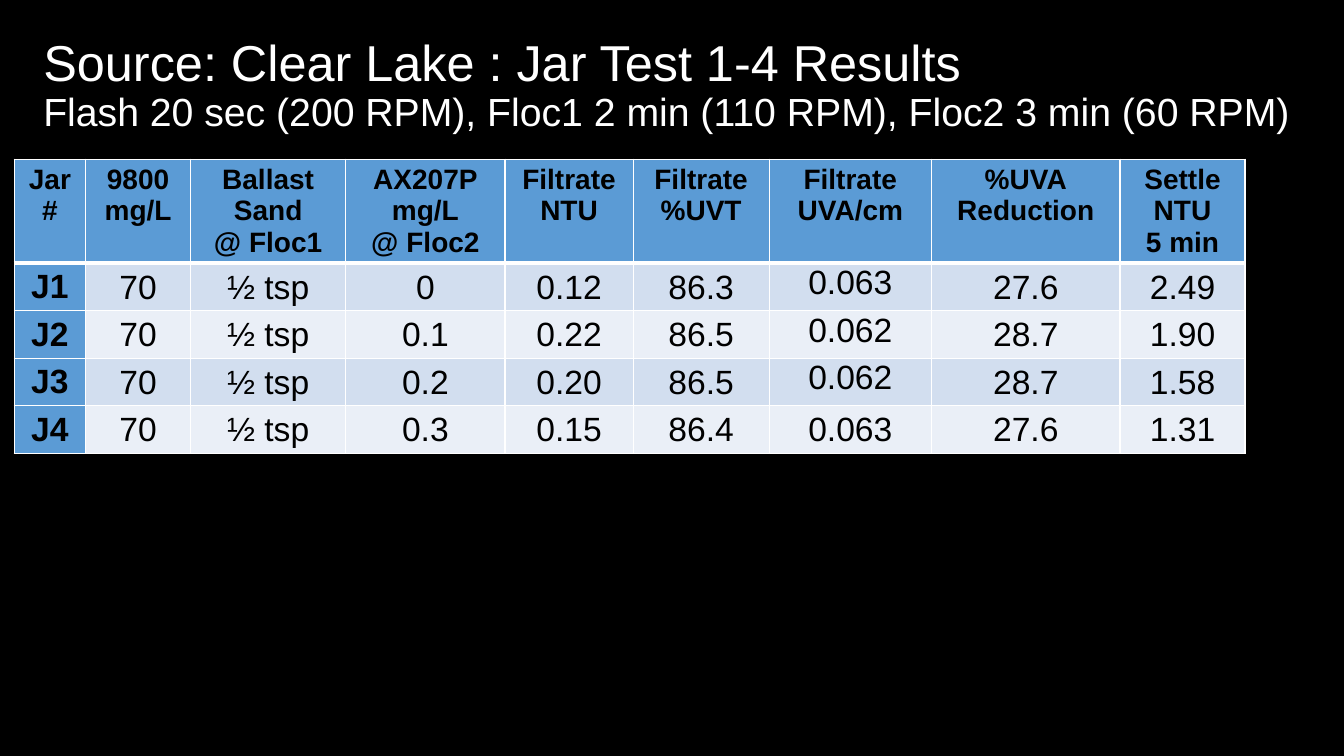
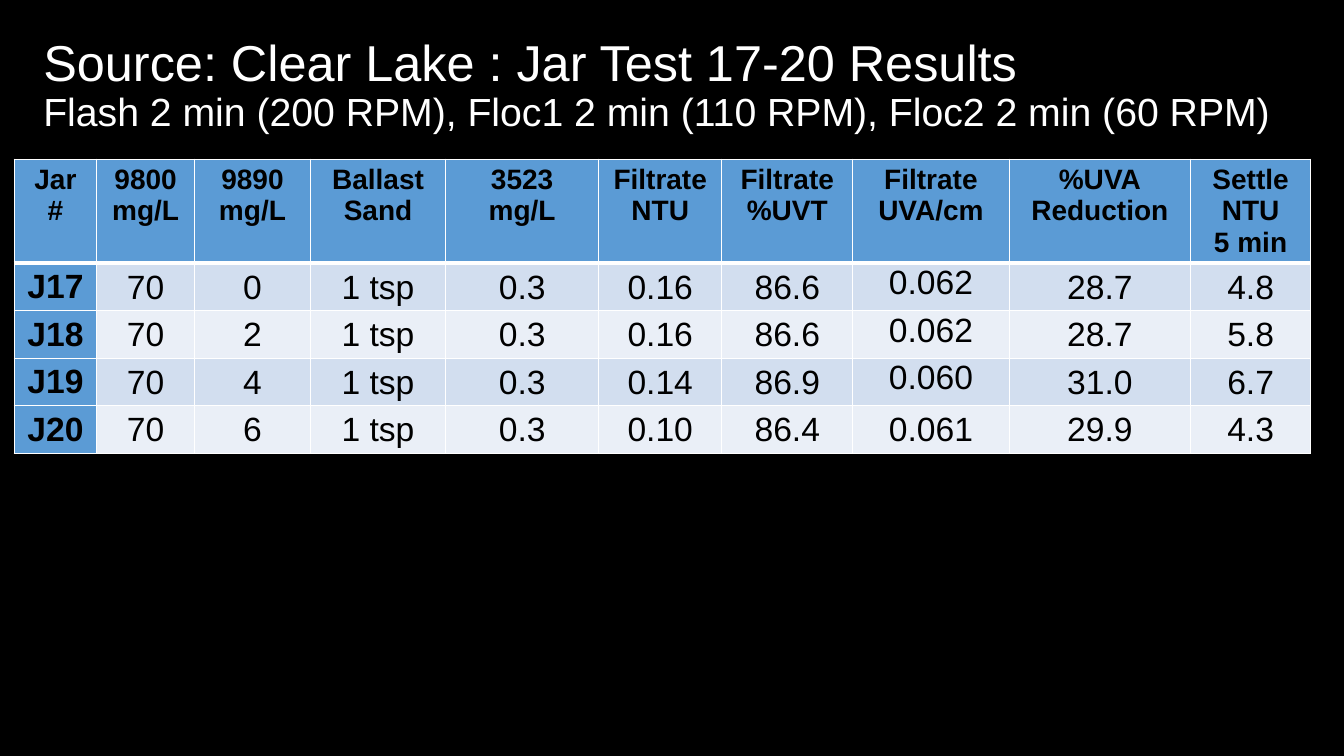
from dataclasses import dataclass

from pptx import Presentation
from pptx.dml.color import RGBColor
from pptx.enum.text import MSO_ANCHOR, MSO_AUTO_SIZE, PP_ALIGN
from pptx.oxml import parse_xml
from pptx.oxml.ns import nsdecls
from pptx.slide import Slide
from pptx.table import _Cell
from pptx.util import Inches, Pt

FONT = "Arial"
BLACK, WHITE = "000000", "FFFFFF"
HEADER_BLUE = "5B9BD5"
BANDS = ("D2DEEF", "EAEFF7")
HEADER_HEIGHT, ROW_HEIGHT = 1.03, 0.47
THIN, THICK = 1, 3
TITLE_ONLY = 5


@dataclass(frozen=True)
class Column:
    heading: str
    width: float
    top_rows: int = 0  # how many data rows keep their text at the top


@dataclass(frozen=True)
class JarTest:
    jars: str
    stages: str
    title_width: float
    columns: list[Column]
    rows: list[tuple[str, ...]]


JAR_TESTS = [
    JarTest(
        jars="1-4",
        stages="Flash 20 sec (200 RPM), Floc1 2 min (110 RPM), Floc2 3 min (60 RPM)",
        title_width=12.64,
        columns=[
            Column("Jar #", 0.71),
            Column("9800\nmg/L", 1.04),
            Column("Ballast\nSand\n@ Floc1", 1.54),
            Column("AX207P\nmg/L\n@ Floc2", 1.58),
            Column("Filtrate\nNTU", 1.27),
            Column("Filtrate\n%UVT", 1.35),
            Column("Filtrate\nUVA/cm", 1.61, top_rows=3),
            Column("%UVA\nReduction", 1.87),
            Column("Settle\nNTU\n5 min", 1.24),
        ],
        rows=[
            ("J1", "70", "½ tsp", "0", "0.12", "86.3", "0.063", "27.6", "2.49"),
            ("J2", "70", "½ tsp", "0.1", "0.22", "86.5", "0.062", "28.7", "1.90"),
            ("J3", "70", "½ tsp", "0.2", "0.20", "86.5", "0.062", "28.7", "1.58"),
            ("J4", "70", "½ tsp", "0.3", "0.15", "86.4", "0.063", "27.6", "1.31"),
        ],
    ),
    JarTest(
        jars="17-20",
        stages="Flash 2 min (200 RPM), Floc1 2 min (110 RPM), Floc2 2 min (60 RPM)",
        title_width=12.47,
        columns=[
            Column("Jar #", 0.82),
            Column("9800\nmg/L", 0.97),
            Column("9890\nmg/L", 1.15),
            Column("Ballast\nSand", 1.34),
            Column("3523\nmg/L", 1.52),
            Column("Filtrate\nNTU", 1.22),
            Column("Filtrate\n%UVT", 1.3),
            Column("Filtrate\nUVA/cm", 1.55, top_rows=3),
            Column("%UVA\nReduction", 1.8),
            Column("Settle\nNTU\n5 min", 1.19),
        ],
        rows=[
            ("J17", "70", "0", "1 tsp", "0.3", "0.16", "86.6", "0.062", "28.7", "4.8"),
            ("J18", "70", "2", "1 tsp", "0.3", "0.16", "86.6", "0.062", "28.7", "5.8"),
            ("J19", "70", "4", "1 tsp", "0.3", "0.14", "86.9", "0.060", "31.0", "6.7"),
            ("J20", "70", "6", "1 tsp", "0.3", "0.10", "86.4", "0.061", "29.9", "4.3"),
        ],
    ),
]


def paint(target, color: str) -> None:
    """Give a fill or a font one solid colour."""
    if hasattr(target, "solid"):
        target.solid()
        target.fore_color.rgb = RGBColor.from_string(color)
    else:
        target.color.rgb = RGBColor.from_string(color)


def add_span(para, text: str, *, size: int, color: str, bold: bool = False) -> None:
    span = para.add_run()
    span.text = text
    span.font.name = FONT
    span.font.size = Pt(size)
    span.font.bold = bold
    paint(span.font, color)


def add_borders(cell: _Cell, *, top: int, bottom: int) -> None:
    properties = cell._tc.get_or_add_tcPr()
    for side, points in (("L", THIN), ("R", THIN), ("T", top), ("B", bottom)):
        properties.append(parse_xml(
            f'<a:ln{side} {nsdecls("a")} w="{Pt(points)}"><a:solidFill>'
            f'<a:srgbClr val="{WHITE}"/></a:solidFill></a:ln{side}>'
        ))


def write_cell(cell: _Cell, text: str, *, size: int, bold: bool, fill: str,
               top: int = THIN, bottom: int = THIN) -> None:
    add_borders(cell, top=top, bottom=bottom)
    paint(cell.fill, fill)
    frame = cell.text_frame
    for index, line in enumerate(text.split("\n")):
        para = frame.add_paragraph() if index else frame.paragraphs[0]
        para.alignment = PP_ALIGN.CENTER
        add_span(para, line, size=size, color=BLACK, bold=bold)


def tighten(cell: _Cell, anchor: MSO_ANCHOR) -> None:
    cell.margin_left = cell.margin_right = cell.margin_top = Inches(0.01)
    cell.margin_bottom = 0
    cell.vertical_anchor = anchor


def add_results(page: Slide, test: JarTest) -> None:
    width = sum(column.width for column in test.columns)
    height = HEADER_HEIGHT + ROW_HEIGHT * len(test.rows)
    table = page.shapes.add_table(
        len(test.rows) + 1, len(test.columns),
        Inches(0.14), Inches(1.58), Inches(width), Inches(height),
    ).table
    for index, row in enumerate(table.rows):
        row.height = Inches(ROW_HEIGHT if index else HEADER_HEIGHT)

    for across, column in enumerate(test.columns):
        table.columns[across].width = Inches(column.width)
        write_cell(table.cell(0, across), column.heading, size=20, bold=True,
                   fill=HEADER_BLUE, bottom=THICK)
        for down, values in enumerate(test.rows):
            cell = table.cell(down + 1, across)
            is_label = across == 0
            write_cell(cell, values[across], size=24, bold=is_label,
                       fill=HEADER_BLUE if is_label else BANDS[down % 2],
                       top=THIN if down else THICK)
            if not is_label:
                tighten(cell, MSO_ANCHOR.TOP if down < column.top_rows
                        else MSO_ANCHOR.MIDDLE)


def write_title(page: Slide, test: JarTest) -> None:
    title = page.shapes.title
    title.left, title.top = Inches(0.33), Inches(0.13)
    title.width, title.height = Inches(test.title_width), Inches(1.45)
    frame = title.text_frame
    frame.word_wrap = True
    frame.auto_size = MSO_AUTO_SIZE.NONE
    frame.vertical_anchor = MSO_ANCHOR.MIDDLE
    para = frame.paragraphs[0]
    para.alignment = PP_ALIGN.LEFT
    para.line_spacing = 0.9
    add_span(para, f"Source: Clear Lake : Jar Test {test.jars} Results",
             size=36, color=WHITE)
    para.add_line_break()
    add_span(para, test.stages, size=28, color=WHITE)


def main() -> None:
    deck = Presentation()
    deck.slide_width, deck.slide_height = Inches(13.33), Inches(7.5)
    paint(deck.slide_master.background.fill, BLACK)
    for test in JAR_TESTS:
        page = deck.slides.add_slide(deck.slide_layouts[TITLE_ONLY])
        write_title(page, test)
        add_results(page, test)
    deck.save("out.pptx")


if __name__ == "__main__":
    main()
